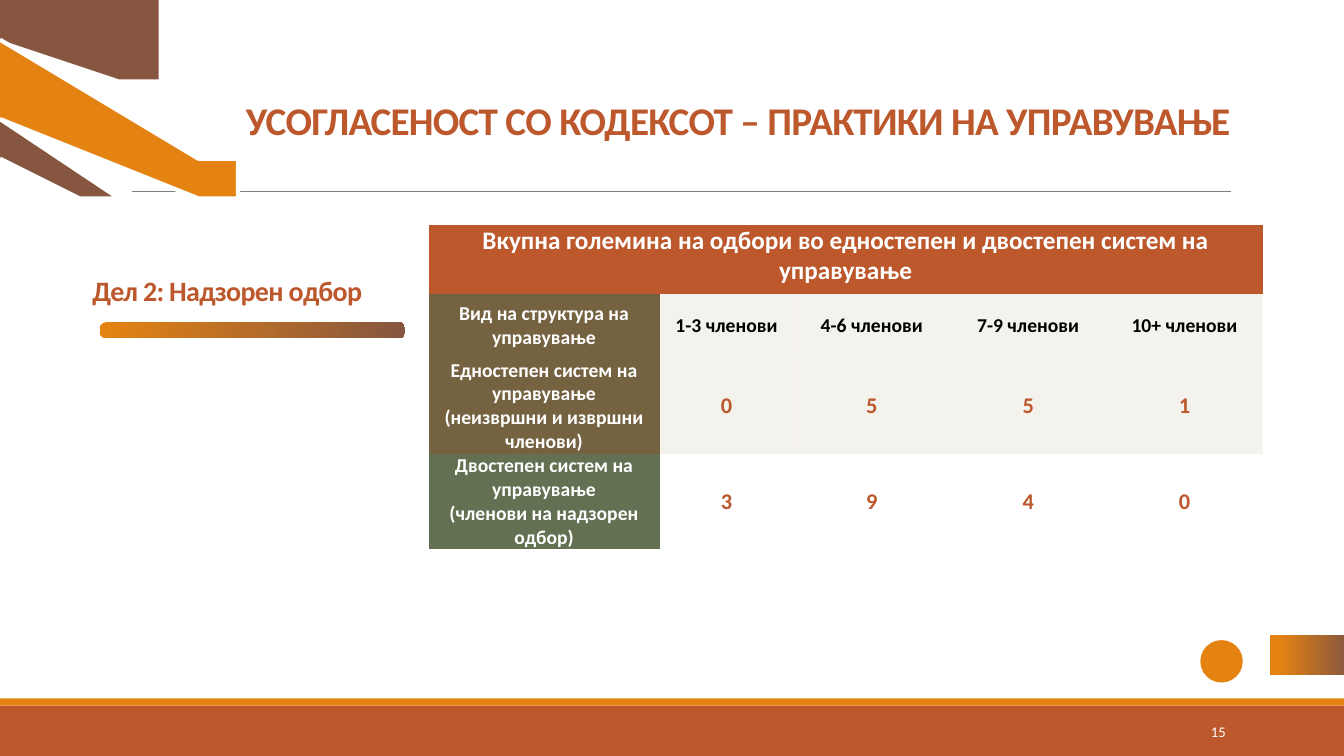
from lxml.etree import SubElement
from pptx import Presentation
from pptx.dml.color import RGBColor
from pptx.enum.shapes import MSO_CONNECTOR as Link, MSO_SHAPE as Form
from pptx.enum.text import MSO_ANCHOR as Anchor, PP_ALIGN as Align
from pptx.oxml.ns import qn
from pptx.util import Cm, Pt

# Content
TITLE = "УСОГЛАСЕНОСТ СО КОДЕКСОТ – ПРАКТИКИ НА УПРАВУВАЊЕ"
PART = "Дел 2: Надзорен одбор"
PAGE = "15"
HEAD = "Вкупна големина на одбори во едностепен и двостепен систем на управување"
ROWS = [
    ("Вид на структура на управување",
     "1-3 членови", "4-6 членови", "7-9 членови", "10+ членови"),
    ("Едностепен систем на управување\n(неизвршни и извршни членови)",
     "0", "5", "5", "1"),
    ("Двостепен систем на управување\n(членови на надзорен одбор)",
     "3", "9", "4", "0"),
]

# Colours
RUST = RGBColor(0xBD, 0x58, 0x2C)
ORANGE = RGBColor(0xE4, 0x83, 0x12)
BROWN = RGBColor(0x86, 0x56, 0x40)
OLIVE = RGBColor(0x74, 0x62, 0x41)
GREEN = RGBColor(0x63, 0x70, 0x52)
SAND = RGBColor(0x9B, 0x83, 0x57)
GREY = RGBColor(0x80, 0x80, 0x80)
WHITE = RGBColor(0xFF, 0xFF, 0xFF)
BLACK = RGBColor(0, 0, 0)

# Outlines in cm: a pair is a straight step, six numbers are a Bezier curve
DOME = [(0, 0), (0, 0.86), (2.97, 2.29), (3.45, 1.93, 3.71, 1.42, 3.71, 1.42),
        (3.73, 1.35), (4.01, 0.84, 4.06, 0.38, 4.01, 0)]
WIDE = [(0, 0.91), (5.38, 3.53), (5.38, 3.53, 6.32, 3.99, 5.92, 4.8),
        (5.89, 4.83), (5.89, 4.83, 5.49, 5.64, 4.57, 5.18), (0, 2.97)]
SLIM = [(0, 3.2), (2.69, 4.52), (2.69, 4.52, 3.05, 4.7, 2.9, 5),
        (2.9, 5.03), (2.9, 5.03, 2.72, 5.36, 2.36, 5.18), (0, 4.01)]
TAB = [(33.87, 16.1), (32.05, 16.1), (32.05, 16.1, 31.52, 16.1, 31.52, 16.64),
       (31.52, 16.66), (31.52, 16.66, 31.52, 17.2, 32.05, 17.2), (33.87, 17.2)]

# Table sizes in cm
COLS = [5.82, 3.38, 3.94, 3.94, 3.94]
HIGH = [1.73, 1.63, 2.4, 2.4]

deck = Presentation()
deck.slide_width, deck.slide_height = Cm(33.87), Cm(19.05)
slide = deck.slides.add_slide(deck.slide_layouts[6])
shapes = slide.shapes


def paint(shape, color, end=None, start=0):
    """Fill a shape with one colour, or with a blend towards end."""
    shape.shadow.inherit = False
    shape.line.fill.background()
    if end is None:
        shape.fill.solid()
        shape.fill.fore_color.rgb = color
        return
    shape.fill.gradient()
    shape.fill.gradient_angle = 0
    for stop, tone, pos in zip(shape.fill.gradient_stops, (color, end), (start, 1)):
        stop.color.rgb, stop.position = tone, pos


def preset(form, box, *tones):
    shape = shapes.add_shape(form, *map(Cm, box))
    paint(shape, *tones)
    return shape


def trace(steps, close=True):
    """Build an outline, with each curve cut into short steps."""
    dots = []
    for step in steps:
        if len(step) == 2:
            dots.append(step)
            continue
        ends = [dots[-1], step[:2], step[2:4], step[4:]]
        for i in range(1, 17):
            t = i / 16
            parts = ((1 - t) ** 3, 3 * t * (1 - t) ** 2, 3 * t * t * (1 - t), t ** 3)
            dots.append(tuple(sum(w * e[k] for w, e in zip(parts, ends))
                              for k in (0, 1)))
    pen = shapes.build_freeform(*dots[0], scale=Cm(1))
    pen.add_line_segments(dots[1:], close=close)
    return pen.convert_to_shape()


def write(frame, text, size=14, color=WHITE, bold=True, align=Align.CENTER,
          lead=None, before=None, space=None):
    frame.word_wrap = True
    for i, words in enumerate(text.split("\n")):
        para = frame.add_paragraph() if i else frame.paragraphs[0]
        para.alignment = align
        para.line_spacing = lead
        para.space_before = before
        run = para.add_run()
        run.text = words
        font = run.font
        font.name, font.size, font.bold = "Calibri", Pt(size), bold
        font.color.rgb = color
        if space is not None:
            run._r.get_or_add_rPr().set("spc", str(space))


def label(box, text, anchor, **style):
    frame = shapes.add_textbox(*map(Cm, box)).text_frame
    frame.vertical_anchor = anchor
    write(frame, text, **style)


# Footer bars and title rule
preset(Form.RECTANGLE, (0, 17.78, 33.87, 1.27), RUST)
preset(Form.RECTANGLE, (0, 17.6, 33.87, 0.18), ORANGE)
rule = shapes.add_connector(Link.STRAIGHT, Cm(3.33), Cm(4.83), Cm(31.01), Cm(4.83))
rule.line.color.rgb, rule.line.width = GREY, Pt(0.5)
SubElement(rule._element.spPr, qn("a:effectLst"))

# Dot and tab, bottom right
preset(Form.OVAL, (30.25, 16.13, 1.07, 1.07), ORANGE)
paint(trace(TAB), ORANGE, BROWN, 0.12)

# Corner dome and bands with white rims
paint(trace(DOME), BROWN)
for band, tone in ((SLIM, BROWN), (WIDE, ORANGE)):
    paint(trace(band), tone)
    rim = trace(band, close=False)
    rim.shadow.inherit = False
    rim.fill.background()
    rim.line.color.rgb, rim.line.width = WHITE, Pt(3)

# Bar under the part name
bar = preset(Form.ROUNDED_RECTANGLE, (2.51, 8.12, 7.7, 0.41), ORANGE, BROWN)
bar.adjustments[0] = 0.4

# Table
grid = shapes.add_table(4, 5, Cm(10.8), Cm(5.67), Cm(sum(COLS)), Cm(sum(HIGH)))
table = grid.table
table._tbl.tblPr.find(qn("a:tableStyleId")).text = "{2D5ABB26-0587-4C30-8999-92F81FD0307C}"
for col, wide in zip(table.columns, COLS):
    col.width = Cm(wide)
for row, high in zip(table.rows, HIGH):
    row.height = Cm(high)


def cell(r, c, text, fill, anchor=Anchor.MIDDLE, alpha=None, **style):
    box = table.cell(r, c)
    box.margin_left = box.margin_right = Cm(0.19)
    box.margin_top = box.margin_bottom = 0
    box.vertical_anchor = anchor
    box.fill.solid()
    box.fill.fore_color.rgb = fill
    if alpha:
        tone = box._tc.tcPr.find(qn("a:solidFill"))[0]
        SubElement(tone, qn("a:alpha")).set("val", str(alpha * 1000))
    write(box.text_frame, text, **style)


table.cell(0, 0).merge(table.cell(0, 4))
cell(0, 0, HEAD, RUST, Anchor.TOP, size=18, before=Pt(2))
for r, (name, *vals) in enumerate(ROWS, 1):
    last = r == len(ROWS)
    cell(r, 0, name, GREEN if last else OLIVE)
    for c, val in enumerate(vals, 1):
        cell(r, c, val, WHITE if last else SAND, alpha=None if last else 10,
             size=14 if r == 1 else 16, color=BLACK if r == 1 else RUST)

# Titles and page number
label((2.08, 5.46, 9.45, 2.41), PART, Anchor.BOTTOM, size=20, color=RUST,
      align=Align.LEFT, lead=0.85, space=-50)
label((3.6, 1.32, 30, 2.41), TITLE, Anchor.BOTTOM, size=28, color=RUST,
      lead=0.85, space=-50)
label((27.51, 17.93, 3.63, 1.02), PAGE, Anchor.MIDDLE, size=10.5, bold=False,
      align=Align.RIGHT)

deck.save("out.pptx")
